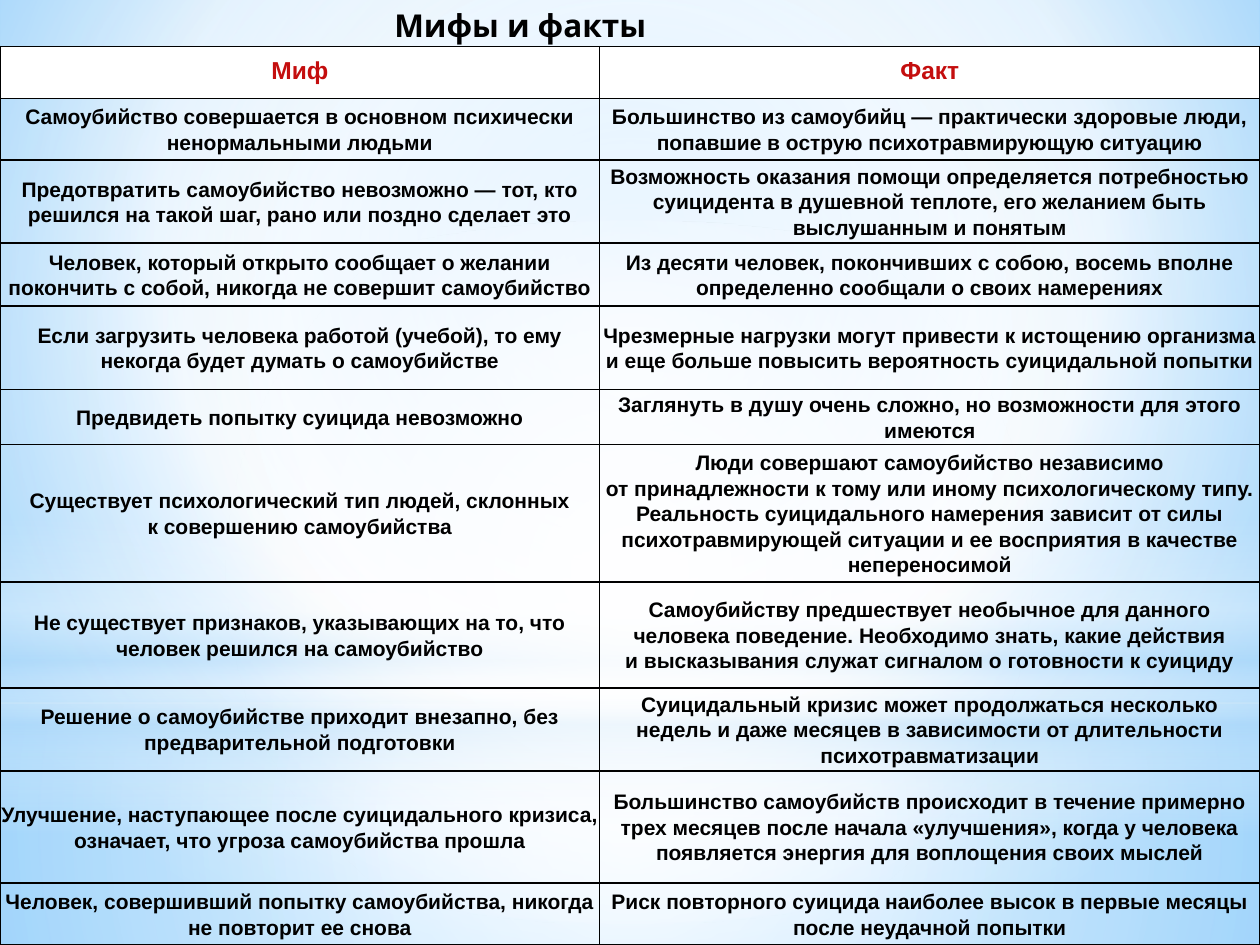
import pptx
import pptx.util
import pptx.oxml
import pptx.oxml.ns
import pptx.dml.color
import pptx.enum.text
import pptx.enum.shapes
from lxml import etree

Inches = pptx.util.Inches
Pt = pptx.util.Pt
qn = pptx.oxml.ns.qn
Align = pptx.enum.text.PP_ALIGN
Anchor = pptx.enum.text.MSO_ANCHOR
Preset = pptx.enum.shapes.MSO_SHAPE

COLORS = {
    "ink": "000000",
    "heading": "C40E0E",
    "white": "FFFFFF",
    "mist": "B4DCFA",
    "sky": "9ED5FF",
    "blue": "5BB9FF",
}
CENTER = (50, 50, 50, 50)
BACKDROP = [
    (Preset.RECTANGLE, (0, 5.58, 10, 1.92), CENTER,
     [(0, "white", 91), (37, "white", 76), (100, "mist", 79)]),
    (Preset.RECTANGLE, (0, 0, 10, 5.58), CENTER,
     [(0, "white", 89), (48, "white", 62), (100, "mist", 79)]),
    (Preset.RECTANGLE, (0, 4.12, 10, 2.5), None,
     [(0, "white", 0), (29, "white", 30), (45, "mist", 40),
      (55, "white", 26), (65, "mist", 60), (100, "white", 0)]),
    (Preset.OVAL, (0, 1.75, 10, 5.58), CENTER,
     [(0, "white", 100), (56, "white", 0)]),
]
COLUMN_WIDTHS = [4.76, 5.24]
ROW_HEIGHTS = [0.41, 0.49, 0.66, 0.5, 0.66, 0.44, 1.09, 0.84, 0.66, 0.89, 0.49]
BINDER = "~"
HARD_SPACE = chr(160)
ROWS = [
    ("Миф", "Факт"),
    ("Самоубийство совершается в~основном психически ненормальными людьми",
     "Большинство из~самоубийц~— практически здоровые люди, попавшие в~острую психотравмирующую ситуацию"),
    ("Предотвратить самоубийство невозможно~— тот, кто решился на~такой шаг, рано или поздно сделает это",
     "Возможность оказания помощи определяется потребностью суицидента в~душевной теплоте, "
     "его желанием быть выслушанным и~понятым"),
    ("Человек, который открыто сообщает о~желании покончить с~собой, никогда не~совершит самоубийство",
     "Из~десяти человек, покончивших с~собою, восемь вполне определенно сообщали о~своих намерениях"),
    ("Если загрузить человека работой (учебой), то~ему некогда будет думать о~самоубийстве",
     "Чрезмерные нагрузки могут привести к~истощению организма "
     "и~еще больше повысить вероятность суицидальной попытки"),
    ("Предвидеть попытку суицида невозможно",
     "Заглянуть в~душу очень сложно, но~возможности для этого имеются"),
    ("Существует психологический тип людей, склонных к~совершению самоубийства",
     "Люди совершают самоубийство независимо от~принадлежности к~тому или иному психологическому типу. "
     "Реальность суицидального намерения зависит от~силы психотравмирующей ситуации "
     "и~ее~восприятия в~качестве непереносимой"),
    ("Не~существует признаков, указывающих на~то, что человек решился на~самоубийство",
     "Самоубийству предшествует необычное для данного человека поведение. "
     "Необходимо знать, какие действия и~высказывания служат сигналом о~готовности к~суициду"),
    ("Решение о~самоубийстве приходит внезапно, без предварительной подготовки",
     "Суицидальный кризис может продолжаться несколько недель и~даже месяцев "
     "в~зависимости от~длительности психотравматизации"),
    ("Улучшение, наступающее после суицидального кризиса, означает, что угроза самоубийства прошла",
     "Большинство самоубийств происходит в~течение примерно трех месяцев после начала «улучшения», "
     "когда у~человека появляется энергия для воплощения своих мыслей"),
    ("Человек, совершивший попытку самоубийства, никогда не~повторит ее~снова",
     "Риск повторного суицида наиболее высок в~первые месяцы после неудачной попытки"),
]


def rgb(name):
    return pptx.dml.color.RGBColor.from_string(COLORS[name])


def add_color(parent, name, opacity=100):
    color = etree.SubElement(parent, qn("a:srgbClr"), val=COLORS[name])
    if opacity < 100:
        etree.SubElement(color, qn("a:alpha"), val=str(opacity * 1000))


def paint_gradient(fill, owner, stops, focus=None):
    fill.gradient()
    gradient = next(owner.iter(qn("a:gradFill")))
    for child in list(gradient):
        gradient.remove(child)
    stop_list = etree.SubElement(gradient, qn("a:gsLst"))
    for position, name, opacity in stops:
        stop = etree.SubElement(stop_list, qn("a:gs"), pos=str(position * 1000))
        add_color(stop, name, opacity)
    if focus:
        route = etree.SubElement(gradient, qn("a:path"), path="circle")
        sides = {side: str(share * 1000) for side, share in zip("ltrb", focus)}
        etree.SubElement(route, qn("a:fillToRect"), sides)
    else:
        etree.SubElement(gradient, qn("a:lin"), ang="5400000", scaled="0")


def write_text(frame, text, size, font, color="ink", align=Align.LEFT, spacing=None):
    para = frame.paragraphs[0]
    para.alignment = align
    if spacing:
        para.line_spacing = Pt(spacing)
    span = para.add_run()
    span.text = text.replace(BINDER, HARD_SPACE)
    span.font.size = Pt(size)
    span.font.name = font
    span.font.bold = True
    span.font.color.rgb = rgb(color)


def add_backdrop(page):
    paint_gradient(page.background.fill, page.element,
                   [(0, "sky", 100), (60, "white", 100), (100, "blue", 100)],
                   (20, 10, 20, 60))
    for preset, box, focus, stops in BACKDROP:
        shape = page.shapes.add_shape(preset, *map(Inches, box))
        shape.shadow.inherit = False
        shape.line.fill.background()
        paint_gradient(shape.fill, shape.element, stops, focus)


def add_title(page, box):
    title = page.shapes.title
    title.left, title.top, title.width, title.height = map(Inches, box)
    title.element.getparent().append(title.element)
    frame = title.text_frame
    frame.word_wrap = True
    frame.auto_size = pptx.enum.text.MSO_AUTO_SIZE.NONE
    frame.vertical_anchor = Anchor.TOP
    write_text(frame, "Мифы и~факты", 18, "Karla")


def add_borders(cell):
    properties = cell._tc.get_or_add_tcPr()
    for index, side in enumerate(("a:lnL", "a:lnR", "a:lnT", "a:lnB")):
        line = etree.Element(qn(side), w=str(Pt(1)))
        add_color(etree.SubElement(line, qn("a:solidFill")), "ink")
        properties.insert(index, line)


def format_cell(cell, text, is_heading):
    cell.margin_left = cell.margin_right = Inches(0.01)
    cell.margin_top = cell.margin_bottom = Inches(0.01)
    cell.vertical_anchor = Anchor.MIDDLE
    if is_heading:
        cell.fill.solid()
        cell.fill.fore_color.rgb = rgb("white")
    else:
        cell.fill.background()
    write_text(cell.text_frame, text, 14 if is_heading else 12, "Arial",
               color="heading" if is_heading else "ink",
               align=Align.CENTER, spacing=14.6)
    add_borders(cell)


def add_myth_table(page, box):
    table = page.shapes.add_table(len(ROWS), len(COLUMN_WIDTHS), *map(Inches, box)).table
    table.horz_banding = False
    for column, width in zip(table.columns, COLUMN_WIDTHS):
        column.width = Inches(width)
    for index, (row, height, texts) in enumerate(zip(table.rows, ROW_HEIGHTS, ROWS)):
        row.height = Inches(height)
        for cell, text in zip(row.cells, texts):
            format_cell(cell, text, is_heading=index == 0)


def main():
    deck = pptx.Presentation()
    deck.slide_width = Inches(10)
    deck.slide_height = Inches(7.5)
    page = deck.slides.add_slide(deck.slide_layouts[5])
    add_backdrop(page)
    add_title(page, (3.03, 0, 4.04, 0.4))
    add_myth_table(page, (0, 0.37, 10, sum(ROW_HEIGHTS)))
    deck.save("out.pptx")


if __name__ == "__main__":
    main()
